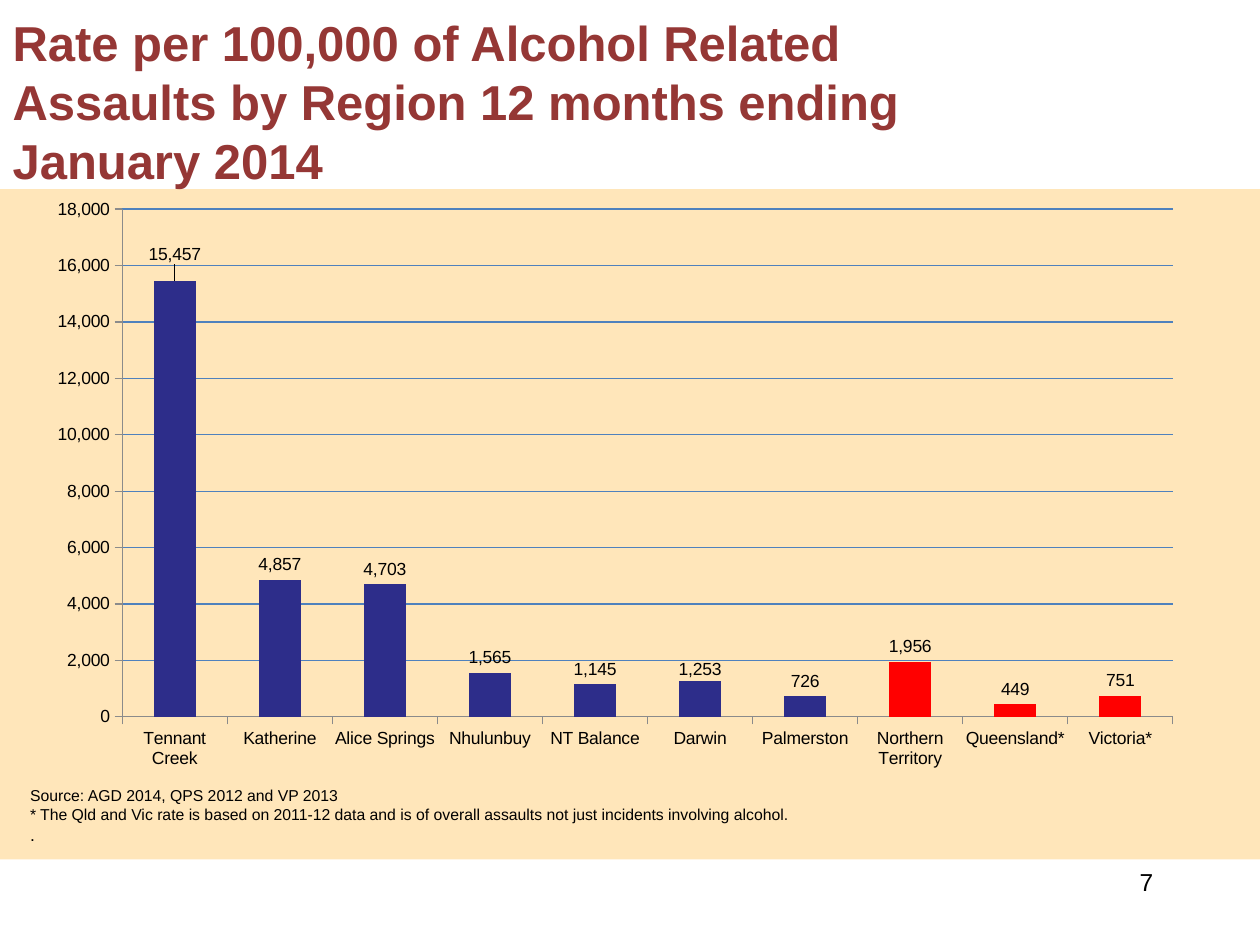
from lxml import etree
from pptx import Presentation
from pptx.chart.data import CategoryChartData
from pptx.dml.color import RGBColor
from pptx.enum.chart import XL_CHART_TYPE as ChartType, XL_LABEL_POSITION as LabelPos, XL_TICK_MARK as Tick
from pptx.enum.shapes import MSO_SHAPE as Shape
from pptx.enum.text import MSO_ANCHOR as Anchor, PP_ALIGN as Align
from pptx.oxml import parse_xml
from pptx.oxml.ns import nsdecls, qn
from pptx.util import Inches, Pt

TITLE = "Rate per 100,000 of Alcohol Related Assaults by Region 12 months ending January 2014"
PAGE_NUMBER = "7"
NOTES = [
    ("Source: AGD 2014, QPS 2012 and VP 2013", "note"),
    ("* The Qld and Vic rate is based on 2011-12 data and is of overall assaults "
     "not just incidents involving alcohol.", "note"),
    (".", "small"),
]
REGION_RATES = [
    ("Tennant Creek", 15457), ("Katherine", 4857), ("Alice Springs", 4703),
    ("Nhulunbuy", 1565), ("NT Balance", 1145), ("Darwin", 1253), ("Palmerston", 726),
]
STATE_RATES = [("Northern Territory", 1956), ("Queensland*", 449), ("Victoria*", 751)]
LABEL_SHIFTS = {"Tennant Creek": -0.02, "Darwin": 0.005}  # share of chart height

THEME = {
    "font": "Arial",
    "sizes": {"title": 28, "page": 14, "note": 9, "small": 10, "chart": 10},
    "colors": {"title": "953735", "text": "000000", "panel": "FFD890", "region": "2D2D8A",
               "state": "FF0000", "grid": "4F81BD", "axis": "8B8B8B"},
    "panel_opacity": 62,
    "line_spacing": 1.0,
}
BOXES = {
    "panel": (0, 1.5, 10, 5.32),
    "title": (0, 0.05, 7.44, 1.51),
    "page": (7.17, 6.83, 2.08, 0.5),
    "notes": (0.14, 6.19, 7.17, 0.48),
    "chart": (0.28, 1.49, 9.21, 4.7),
}
PLOT = (0.97, 1.66, 8.34, 4.03)
LEADER_LINES_OFF = (
    f'<c:extLst {nsdecls("c")}><c:ext uri="{{CE6537A1-D6FC-4f65-9D91-7224C49458BB}}" '
    'xmlns:c15="http://schemas.microsoft.com/office/drawing/2012/chart">'
    '<c15:showLeaderLines val="0"/></c:ext></c:extLst>')


def color(name):
    return RGBColor.from_string(THEME["colors"][name])


def box(name):
    return [Inches(length) for length in BOXES[name]]


def style_font(font, size, color_name="text", bold=False):
    formats = {"name": THEME["font"], "size": Pt(THEME["sizes"][size]), "bold": bold}
    for attribute, value in formats.items():
        setattr(font, attribute, value)
    font.color.rgb = color(color_name)


def write(frame, lines, color_name="text", bold=False, align=Align.LEFT):
    """Fill a text frame with (text, size name) lines."""
    frame.word_wrap = True
    frame.vertical_anchor = Anchor.TOP
    for index, (text, size) in enumerate(lines):
        paragraph = frame.add_paragraph() if index else frame.paragraphs[0]
        paragraph.alignment = align
        paragraph.line_spacing = THEME["line_spacing"]
        run = paragraph.add_run()
        run.text = text
        style_font(run.font, size, color_name, bold)


def add_panel(slide):
    """Add the tinted panel behind everything else."""
    panel = slide.shapes.add_shape(Shape.RECTANGLE, *box("panel"))
    panel.shadow.inherit = False
    panel.line.fill.background()
    panel.fill.solid()
    panel.fill.fore_color.rgb = color("panel")
    tint = panel.fill._xPr.find(".//" + qn("a:srgbClr"))
    etree.SubElement(tint, qn("a:alpha")).set("val", str(THEME["panel_opacity"] * 1000))
    slide.shapes.title._element.addprevious(panel._element)


def layout_xml(content):
    return parse_xml(f'<c:layout {nsdecls("c")}><c:manualLayout>{content}</c:manualLayout></c:layout>')


def place_plot(chart):
    """Pin the inner plot area to PLOT, given in slide inches."""
    left, top, width, height = BOXES["chart"]
    plot_left, plot_top, plot_width, plot_height = PLOT
    shares = {"x": (plot_left - left) / width, "y": (plot_top - top) / height,
              "w": plot_width / width, "h": plot_height / height}
    content = ('<c:layoutTarget val="inner"/><c:xMode val="edge"/><c:yMode val="edge"/>'
               + "".join(f'<c:{key} val="{share:.4f}"/>' for key, share in shares.items()))
    plot_area = chart._chartSpace.chart.plotArea
    for old in plot_area.findall(qn("c:layout")):
        plot_area.remove(old)
    plot_area.insert(0, layout_xml(content))


def hide_leader_lines(labels):
    holder = labels._element
    for old in holder.findall(qn("c:showLeaderLines")):
        holder.remove(old)
    holder.append(parse_xml(LEADER_LINES_OFF))


def add_rates_chart(slide):
    rates = REGION_RATES + STATE_RATES
    data = CategoryChartData(number_format="#,##0")
    data.categories = [place for place, _ in rates]
    data.add_series("Series 1", [rate for _, rate in rates])
    chart = slide.shapes.add_chart(ChartType.COLUMN_CLUSTERED, *box("chart"), data).chart
    chart.has_legend = chart.has_title = False
    style_font(chart.font, "chart")

    rate_axis = chart.value_axis
    for axis in (chart.category_axis, rate_axis):
        axis.major_tick_mark, axis.minor_tick_mark = Tick.OUTSIDE, Tick.NONE
        axis.format.line.color.rgb = color("axis")
        axis.format.line.width = Pt(0.75)
    for attribute, value in {"minimum_scale": 0, "maximum_scale": 18000, "major_unit": 2000,
                             "has_major_gridlines": True}.items():
        setattr(rate_axis, attribute, value)
    rate_axis.tick_labels.number_format = "#,##0"
    rate_axis.tick_labels.number_format_is_linked = False
    rate_axis.major_gridlines.format.line.color.rgb = color("grid")
    rate_axis.major_gridlines.format.line.width = Pt(0.75)

    plot = chart.plots[0]
    plot.gap_width = 150
    plot.vary_by_categories = False
    bars = plot.series[0]
    bars.invert_if_negative = False
    bars.format.fill.solid()
    bars.format.fill.fore_color.rgb = color("region")
    labels = bars.data_labels
    for attribute, value in {"show_value": True, "position": LabelPos.OUTSIDE_END,
                             "number_format": "#,##0", "number_format_is_linked": False}.items():
        setattr(labels, attribute, value)
    style_font(labels.font, "chart")

    for index, (place, _) in enumerate(rates):
        if index >= len(REGION_RATES):
            fill = bars.points[index].format.fill
            fill.solid()
            fill.fore_color.rgb = color("state")
        if place in LABEL_SHIFTS:
            label = bars.points[index].data_label
            style_font(label.font, "chart")
            label.position = LabelPos.OUTSIDE_END
            shift = layout_xml(f'<c:x val="0"/><c:y val="{LABEL_SHIFTS[place]}"/>')
            label._dLbl.find(qn("c:idx")).addnext(shift)
    hide_leader_lines(labels)
    place_plot(chart)


def main():
    deck = Presentation()
    deck.slide_width, deck.slide_height = Inches(10), Inches(7.5)
    slide = deck.slides.add_slide(deck.slide_layouts[5])
    add_panel(slide)
    title = slide.shapes.title
    title.left, title.top, title.width, title.height = box("title")
    write(title.text_frame, [(TITLE, "title")], "title", bold=True)
    page = slide.shapes.add_textbox(*box("page"))
    write(page.text_frame, [(PAGE_NUMBER, "page")], align=Align.RIGHT)
    notes = slide.shapes.add_textbox(*box("notes"))
    write(notes.text_frame, NOTES)
    add_rates_chart(slide)
    deck.save("out.pptx")


if __name__ == "__main__":
    main()
